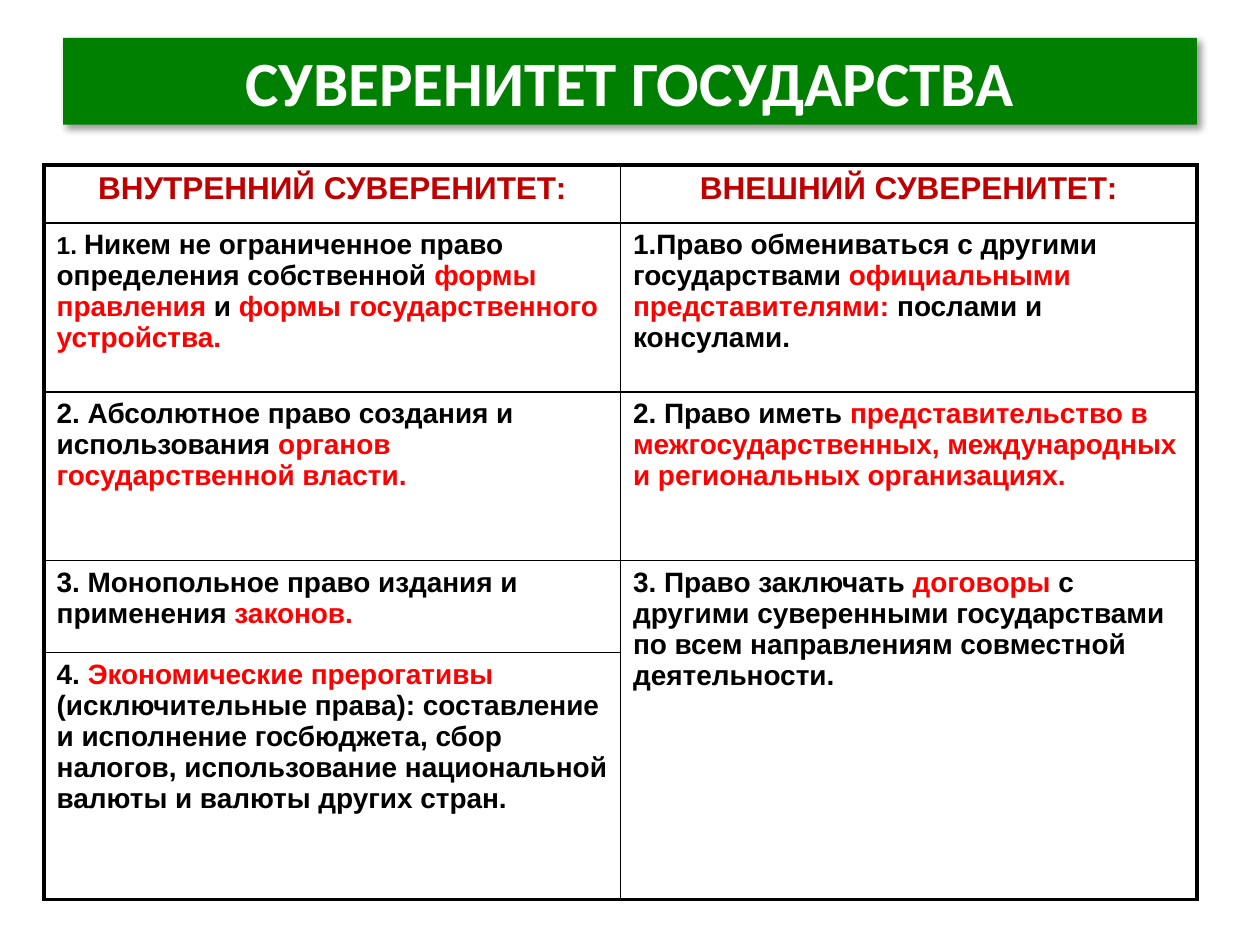
import pptx
import pptx.util
import pptx.dml.color
import pptx.enum.text
import pptx.oxml.ns
import lxml.etree

Pt = pptx.util.Pt
qn = pptx.oxml.ns.qn
ALIGN = pptx.enum.text.PP_ALIGN

COLORS = {"green": "008000", "white": "FFFFFF", "black": "000000",
          "heading": "C00000", "accent": "FF0000"}

# Content: each cell is a list of (text, color, size) runs
TITLE = "СУВЕРЕНИТЕТ ГОСУДАРСТВА"
HEADINGS = ["ВНУТРЕННИЙ СУВЕРЕНИТЕТ:", "ВНЕШНИЙ СУВЕРЕНИТЕТ:"]
INTERNAL = [
    [("1. ", "black", 14),
     ("Никем не ограниченное право определения собственной ", "black", 16),
     ("формы правления ", "accent", 16), ("и", "black", 16),
     (" формы государственного устройства.", "accent", 16)],
    [("2. Абсолютное право создания и использования ", "black", 16),
     ("органов государственной власти.", "accent", 16)],
    [("3. Монопольное право издания и применения ", "black", 16),
     ("законов.", "accent", 16)],
    [("4. ", "black", 16), ("Экономические прерогативы ", "accent", 16),
     ("(исключительные права): составление и исполнение госбюджета, сбор налогов, "
      "использование национальной валюты и валюты других стран.", "black", 16)],
]
EXTERNAL = [
    [("1.Право обмениваться с другими государствами ", "black", 16),
     ("официальными представителями: ", "accent", 16),
     ("послами и консулами.", "black", 16)],
    [("2. Право иметь ", "black", 16),
     ("представительство в межгосударственных, международных и региональных "
      "организациях.", "accent", 16)],
    [("3. Право заключать", "black", 16), (" договоры ", "accent", 16),
     ("с другими суверенными государствами по всем направлениям совместной "
      "деятельности.", "black", 16)],
]
COLUMNS = [[[(heading, "heading", 18)]] + items
           for heading, items in zip(HEADINGS, (INTERNAL, EXTERNAL))]

# Layout in points
TITLE_BOX = {"left": 36, "top": 21.6, "width": 648, "height": 49.7}
TABLE_LEFT, TABLE_TOP, COLUMN_WIDTH = 25.2, 94.3, 329.4
ROW_HEIGHTS = [33.1, 96.5, 96.5, 52.6, 141.1]
OUTER, INNER = 2.25, 1


def rgb(name):
    return pptx.dml.color.RGBColor.from_string(COLORS[name])


def add_run(paragraph, text, color, size, font):
    run = paragraph.add_run()
    run.text = text
    for key, value in {"name": font, "size": Pt(size), "bold": True}.items():
        setattr(run.font, key, value)
    run.font.color.rgb = rgb(color)


def sub(parent, tag, **attributes):
    return lxml.etree.SubElement(parent, qn(tag), attributes)


def add_alpha(color_parent, percent):
    sub(color_parent, "a:alpha", val=str(percent * 1000))


def set_borders(cell, widths):
    properties = cell._tc.get_or_add_tcPr()
    for position, (side, width) in enumerate(widths.items()):
        line = lxml.etree.Element(qn("a:ln" + side), w=str(int(Pt(width))))
        sub(sub(line, "a:solidFill"), "a:srgbClr", val=COLORS["black"])
        properties.insert(position, line)


def build_title(slide):
    title = slide.shapes.title
    for key, value in TITLE_BOX.items():
        setattr(title, key, Pt(value))
    title.fill.solid()
    title.fill.fore_color.rgb = rgb("green")
    title.shadow.inherit = False
    effects = title._element.spPr.find(qn("a:effectLst"))
    shadow = sub(effects, "a:outerShdw", blurRad=str(int(Pt(4))), dist=str(int(Pt(3))),
                 dir="2700000", algn="tl", rotWithShape="0")
    add_alpha(sub(shadow, "a:srgbClr", val=COLORS["black"]), 40)
    frame = title.text_frame
    for key, value in {"word_wrap": True,
                       "auto_size": pptx.enum.text.MSO_AUTO_SIZE.NONE,
                       "vertical_anchor": pptx.enum.text.MSO_ANCHOR.MIDDLE}.items():
        setattr(frame, key, value)
    frame.paragraphs[0].alignment = ALIGN.CENTER
    add_run(frame.paragraphs[0], TITLE, "white", 36, "Calibri")


def build_table(slide):
    last_row, last_column = len(ROW_HEIGHTS) - 1, len(COLUMNS) - 1
    table = slide.shapes.add_table(
        len(ROW_HEIGHTS), len(COLUMNS), Pt(TABLE_LEFT), Pt(TABLE_TOP),
        Pt(COLUMN_WIDTH * len(COLUMNS)), Pt(sum(ROW_HEIGHTS))).table
    table.first_row = table.horz_banding = False
    for column in table.columns:
        column.width = Pt(COLUMN_WIDTH)
    for row, height in zip(table.rows, ROW_HEIGHTS):
        row.height = Pt(height)
    # The third external right spans the last two rows
    table.cell(last_row - 1, last_column).merge(table.cell(last_row, last_column))

    for c, contents in enumerate(COLUMNS):
        for r in range(len(ROW_HEIGHTS)):
            cell = table.cell(r, c)
            cell.fill.solid()
            cell.fill.fore_color.rgb = rgb("white")
            if r > 0:
                add_alpha(cell._tc.tcPr.find(".//" + qn("a:srgbClr")), 55)
            bottom_row = r + (cell.span_height if cell.is_merge_origin else 1) - 1
            set_borders(cell, {"L": OUTER if c == 0 else INNER,
                               "R": OUTER if c == last_column else INNER,
                               "T": OUTER if r == 0 else INNER,
                               "B": OUTER if bottom_row == last_row else INNER})
            if cell.is_spanned:
                continue
            paragraph = cell.text_frame.paragraphs[0]
            paragraph.alignment = ALIGN.CENTER if r == 0 else ALIGN.LEFT
            spacing = sub(paragraph._p.get_or_add_pPr(), "a:spcBef")
            sub(spacing, "a:spcPct", val="20000")
            for text, color, size in contents[r]:
                add_run(paragraph, text, color, size, "Arial")


def main():
    presentation = pptx.Presentation()
    presentation.slide_width, presentation.slide_height = Pt(720), Pt(540)
    slide = presentation.slides.add_slide(presentation.slide_layouts[5])
    build_title(slide)
    build_table(slide)
    presentation.save("out.pptx")


if __name__ == "__main__":
    main()
